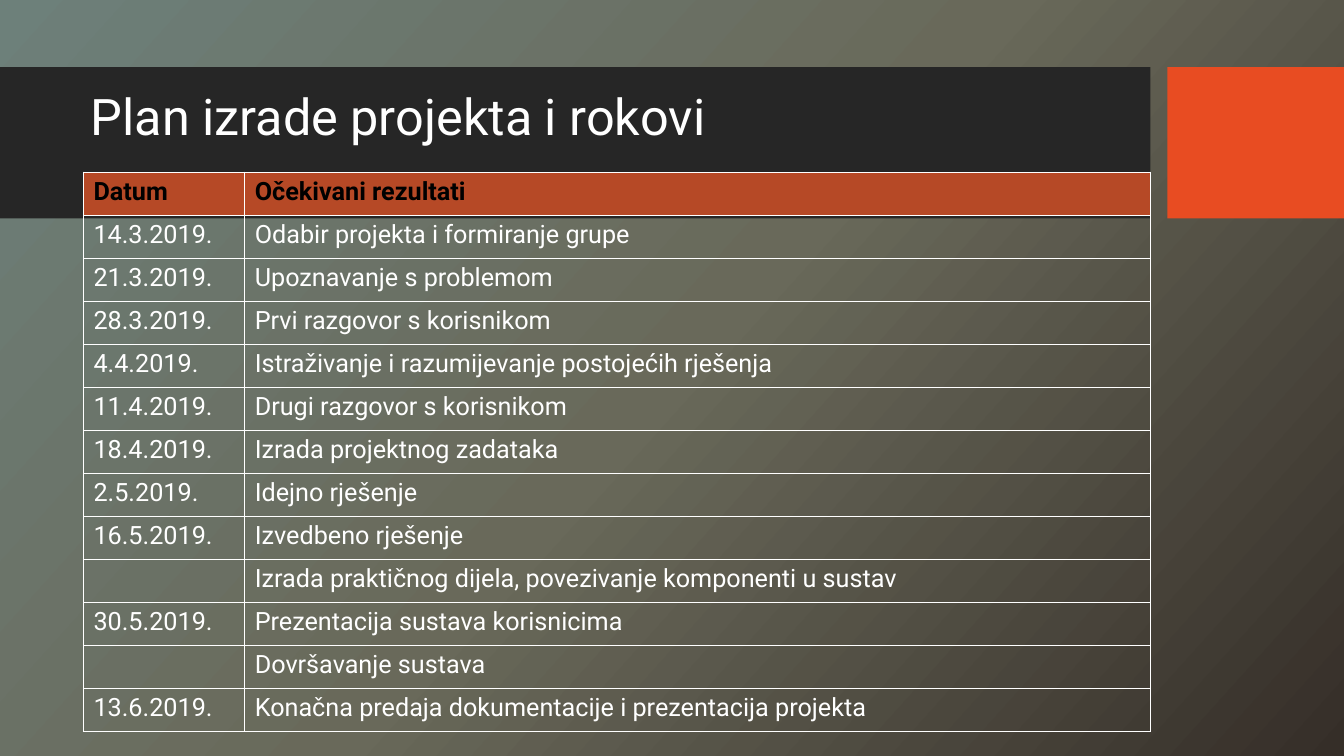
from copy import deepcopy

from lxml.etree import SubElement
from pptx import Presentation
from pptx.dml.color import RGBColor
from pptx.enum.shapes import MSO_SHAPE
from pptx.enum.text import MSO_ANCHOR, PP_ALIGN
from pptx.oxml.ns import qn
from pptx.util import Pt

TITLE = "Plan izrade projekta i rokovi"
ROWS = [
    ("Datum", "Očekivani rezultati"),
    ("14.3.2019.", "Odabir projekta i formiranje grupe"),
    ("21.3.2019.", "Upoznavanje s problemom"),
    ("28.3.2019.", "Prvi razgovor s korisnikom"),
    ("4.4.2019.", "Istraživanje i razumijevanje postojećih rješenja"),
    ("11.4.2019.", "Drugi razgovor s korisnikom"),
    ("18.4.2019.", "Izrada projektnog zadataka"),
    ("2.5.2019.", "Idejno rješenje"),
    ("16.5.2019.", "Izvedbeno rješenje"),
    ("", "Izrada praktičnog dijela, povezivanje komponenti u sustav"),
    ("30.5.2019.", "Prezentacija sustava korisnicima"),
    ("", "Dovršavanje sustava"),
    ("13.6.2019.", "Konačna predaja dokumentacije i prezentacija projekta"),
]

THEME = {
    "font": "Roboto",
    "title_size": 36,
    "table_size": 18,
    "text": "FFFFFF",
    "header_text": "000000",
    "header_fill": "B64926",
    "band": "262626",
    "accent": "E84C22",
    "background": [(0, "6D807A"), (0.5, "69695A"), (1, "352E28")],
}

SLIDE_WIDTH, SLIDE_HEIGHT = 960, 540
BAND_TOP, BAND_HEIGHT = 48, 108
BAND_WIDTH, ACCENT_LEFT = 821.8, 833.8
TITLE_BOX = (57.6, 33.1, 828, 104.4)
TABLE_LEFT, TABLE_TOP = 59.6, 123
COLUMN_WIDTHS = (115.2, 647.2)
ROW_HEIGHT = 30.75
BORDER_WIDTH = 1


def color(name):
    return RGBColor.from_string(THEME[name])


def set_font(paragraph, size, color_name, bold=False):
    font = paragraph.font
    font.name = THEME["font"]
    font.size = Pt(THEME[size])
    font.bold = bold
    font.color.rgb = color(color_name)


def paint_background(slide):
    fill = slide.background.fill
    fill.gradient()
    fill.gradient_angle = 360 - 42
    stop_list = slide.element.find(".//" + qn("a:gsLst"))
    stop_list.insert(1, deepcopy(stop_list[0]))
    for stop, (position, value) in zip(fill.gradient_stops, THEME["background"]):
        stop.position = position
        stop.color.rgb = RGBColor.from_string(value)


def add_block(slide, left, width, color_name):
    block = slide.shapes.add_shape(
        MSO_SHAPE.RECTANGLE, Pt(left), Pt(BAND_TOP), Pt(width), Pt(BAND_HEIGHT))
    block.shadow.inherit = False
    block.fill.solid()
    block.fill.fore_color.rgb = color(color_name)
    block.line.fill.background()


def add_title(slide):
    title = slide.shapes.title
    title.left, title.top, title.width, title.height = map(Pt, TITLE_BOX)
    frame = title.text_frame
    frame.text = TITLE
    frame.word_wrap = True
    frame.vertical_anchor = MSO_ANCHOR.MIDDLE
    paragraph = frame.paragraphs[0]
    paragraph.alignment = PP_ALIGN.LEFT
    paragraph.line_spacing = 0.9
    set_font(paragraph, "title_size", "text")


def set_borders(cell):
    """Line all four sides; must run before the cell fill is set."""
    properties = cell._tc.get_or_add_tcPr()
    for side in ("a:lnL", "a:lnR", "a:lnT", "a:lnB"):
        line = SubElement(properties, qn(side), w=str(Pt(BORDER_WIDTH)))
        fill = SubElement(line, qn("a:solidFill"))
        SubElement(fill, qn("a:srgbClr"), val=THEME["text"])


def add_schedule(slide):
    table = slide.shapes.add_table(
        len(ROWS), len(COLUMN_WIDTHS), Pt(TABLE_LEFT), Pt(TABLE_TOP),
        Pt(sum(COLUMN_WIDTHS)), Pt(ROW_HEIGHT * len(ROWS))).table
    table.horz_banding = False
    for column, width in zip(table.columns, COLUMN_WIDTHS):
        column.width = Pt(width)
    for row_index, texts in enumerate(ROWS):
        is_header = row_index == 0
        table.rows[row_index].height = Pt(ROW_HEIGHT)
        for cell, text in zip(table.rows[row_index].cells, texts):
            set_borders(cell)
            if is_header:
                cell.fill.solid()
                cell.fill.fore_color.rgb = color("header_fill")
            else:
                cell.fill.background()
            cell.text = text
            set_font(cell.text_frame.paragraphs[0], "table_size",
                     "header_text" if is_header else "text", is_header)


def main():
    presentation = Presentation()
    presentation.slide_width = Pt(SLIDE_WIDTH)
    presentation.slide_height = Pt(SLIDE_HEIGHT)
    slide = presentation.slides.add_slide(presentation.slide_layouts.get_by_name("Title Only"))
    paint_background(slide)
    add_block(slide, 0, BAND_WIDTH, "band")
    add_block(slide, ACCENT_LEFT, SLIDE_WIDTH - ACCENT_LEFT, "accent")
    add_title(slide)
    # The title placeholder comes first in the tree; lift it above the blocks.
    slide.shapes.element.append(slide.shapes.title.element)
    add_schedule(slide)
    presentation.save("out.pptx")


if __name__ == "__main__":
    main()
